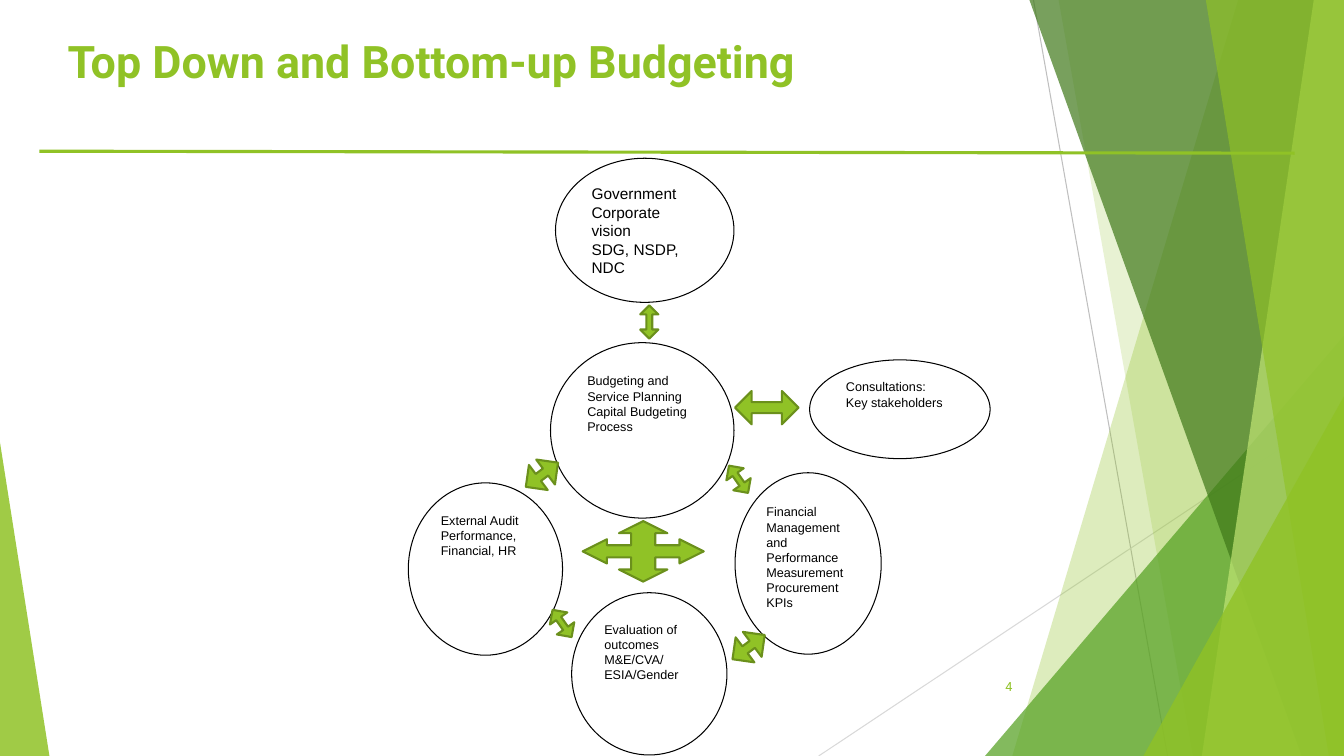
from lxml import etree
from pptx import Presentation
from pptx.dml.color import RGBColor
from pptx.enum.shapes import MSO_CONNECTOR, MSO_SHAPE
from pptx.enum.text import MSO_ANCHOR, MSO_AUTO_SIZE, PP_ALIGN
from pptx.oxml.ns import qn
from pptx.util import Inches, Pt

GREEN, DARK_GREEN, BLACK, WHITE = "90C226", "6B901C", "000000", "FFFFFF"
WIDTH, HEIGHT = 13.33, 7.5


def paint(shape, fill=None, line=None, width=0.75, opacity=100):
    """Set fill, outline and opacity (percent), and switch the shadow off."""
    properties = shape._element.spPr
    if fill:
        shape.fill.solid()
        shape.fill.fore_color.rgb = RGBColor.from_string(fill)
        if opacity < 100:
            color = properties.find(qn("a:solidFill"))[0]
            etree.SubElement(color, qn("a:alpha"), val=str(opacity * 1000))
    if line:
        shape.line.color.rgb = RGBColor.from_string(line)
        shape.line.width = Pt(width)
    else:
        shape.line.fill.background()
    etree.SubElement(properties, qn("a:effectLst"))


def write_text(shape, text, size=9, font="Arial", color=BLACK, bold=False,
               align=PP_ALIGN.LEFT, anchor=MSO_ANCHOR.TOP):
    frame = shape.text_frame
    frame.text = text
    frame.word_wrap = True
    frame.auto_size = MSO_AUTO_SIZE.NONE
    frame.vertical_anchor = anchor
    for paragraph in frame.paragraphs:
        paragraph.alignment = align
        paragraph.font.size = Pt(size)
        paragraph.font.name = font
        paragraph.font.bold = bold
        paragraph.font.color.rgb = RGBColor.from_string(color)


presentation = Presentation()
presentation.slide_width = Inches(WIDTH)
presentation.slide_height = Inches(HEIGHT)
slide = presentation.slides.add_slide(presentation.slide_layouts[5])
shapes = slide.shapes

# Background: thin lines, then translucent facets from back to front
thin_lines = [
    ((10.25, 0, 11.58, HEIGHT), "BFBFBF"),
    ((WIDTH, 4.03, 8.12, HEIGHT), "D9D9D9"),
]
for ends, color in thin_lines:
    line = shapes.add_connector(MSO_CONNECTOR.STRAIGHT, *map(Inches, ends))
    paint(line, line=color)

# A band gives the x of its left edge at top and bottom;
# a triangle gives left, top, width and the position of its tip.
facets = [
    ("band", (12.28, 10.04), GREEN, 30),
    ("band", (10.5, 11.83), GREEN, 20),
    ("triangle", (9.77, 3.33, 3.56, 1), "54A021", 72),
    ("band", (10.21, 12.91), "3F7819", 70),
    ("band", (13.03, 11.92), "C0E474", 70),
    ("band", (11.96, 13.18), GREEN, 65),
    ("triangle", (11.34, 3.93, 1.99, 1), GREEN, 80),
    ("triangle", (0, 4.39, 0.49, 0), GREEN, 85),
]
for kind, geometry, color, opacity in facets:
    if kind == "band":
        top_x, bottom_x = geometry
        outline = shapes.build_freeform(Inches(top_x), 0)
        outline.add_line_segments([
            (Inches(WIDTH), 0),
            (Inches(WIDTH), Inches(HEIGHT)),
            (Inches(bottom_x), Inches(HEIGHT)),
        ])
        facet = outline.convert_to_shape()
    else:
        left, top, width, tip = geometry
        facet = shapes.add_shape(
            MSO_SHAPE.ISOSCELES_TRIANGLE, Inches(left), Inches(top),
            Inches(width), Inches(HEIGHT - top))
        facet.adjustments[0] = tip
    paint(facet, color, opacity=opacity)

# Title, slide number and rule
title = shapes.title
title.left, title.top = Inches(0.57), Inches(0.28)
title.width, title.height = Inches(12.1), Inches(1.24)
write_text(title, "Top Down and Bottom-up Budgeting", size=32, font="Roboto",
           color=GREEN, bold=True)

slide_number = shapes.add_textbox(
    Inches(9.39), Inches(6.61), Inches(0.75), Inches(0.4))
write_text(slide_number, "4", font="Roboto", color=GREEN,
           align=PP_ALIGN.RIGHT, anchor=MSO_ANCHOR.MIDDLE)

rule = shapes.add_connector(
    MSO_CONNECTOR.STRAIGHT, Inches(0.39), Inches(1.5), Inches(12.84), Inches(1.52))
paint(rule, line=GREEN, width=2.25)

# Budgeting steps
steps = [
    ((5.46, 3.4, 1.82, 1.74), 9,
     "Budgeting and Service Planning Capital Budgeting Process"),
    ((5.51, 1.57, 1.77, 1.43), 11, "Government Corporate vision\nSDG, NSDP, NDC"),
    ((7.29, 4.69, 1.45, 1.8), 9,
     "Financial Management and Performance Measurement\nProcurement\nKPIs"),
    ((5.67, 5.88, 1.54, 1.61), 9, "Evaluation of outcomes\nM&E/CVA/ESIA/Gender"),
    ((4.05, 4.79, 1.53, 1.71), 9, "External Audit\nPerformance, Financial, HR"),
    ((8.03, 3.57, 1.79, 0.98), 9, "Consultations:\nKey stakeholders"),
]
for box, size, text in steps:
    step = shapes.add_shape(MSO_SHAPE.OVAL, *map(Inches, box))
    paint(step, WHITE, BLACK)
    write_text(step, text, size=size)

# Double arrows between steps: box, rotation, head length
arrows = [
    ((6.35, 3.03, 0.18, 0.33), 0, 0.33),
    ((7.44, 3.73, 0.33, 0.63), 90, 0.33),
    ((7.22, 4.59, 0.21, 0.33), 325, 0.28),
    ((5.47, 6.02, 0.21, 0.33), 325, 0.28),
    ((5.22, 4.51, 0.31, 0.4), 53.1, 0.28),
    ((7.27, 6.22, 0.31, 0.4), 53.1, 0.28),
]
for box, rotation, head in arrows:
    arrow = shapes.add_shape(MSO_SHAPE.UP_DOWN_ARROW, *map(Inches, box))
    arrow.rotation = rotation
    arrow.adjustments[0] = 0.5
    arrow.adjustments[1] = head
    paint(arrow, GREEN, DARK_GREEN, 1.5)

# Four-way arrow on a 10 by 10 grid: one quarter turned four times
quarter = [(5, 0), (3, 2), (4, 2), (4, 4), (2, 4), (2, 3)]
corners = []
for turn in range(4):
    corners += quarter
    quarter = [(y, 10 - x) for x, y in quarter]
outline = shapes.build_freeform(*corners[0], scale=(Inches(0.12), Inches(0.06)))
outline.add_line_segments(corners[1:])
four_way_arrow = outline.convert_to_shape(Inches(5.78), Inches(5.17))
paint(four_way_arrow, GREEN, DARK_GREEN, 1.5)

presentation.save("out.pptx")
